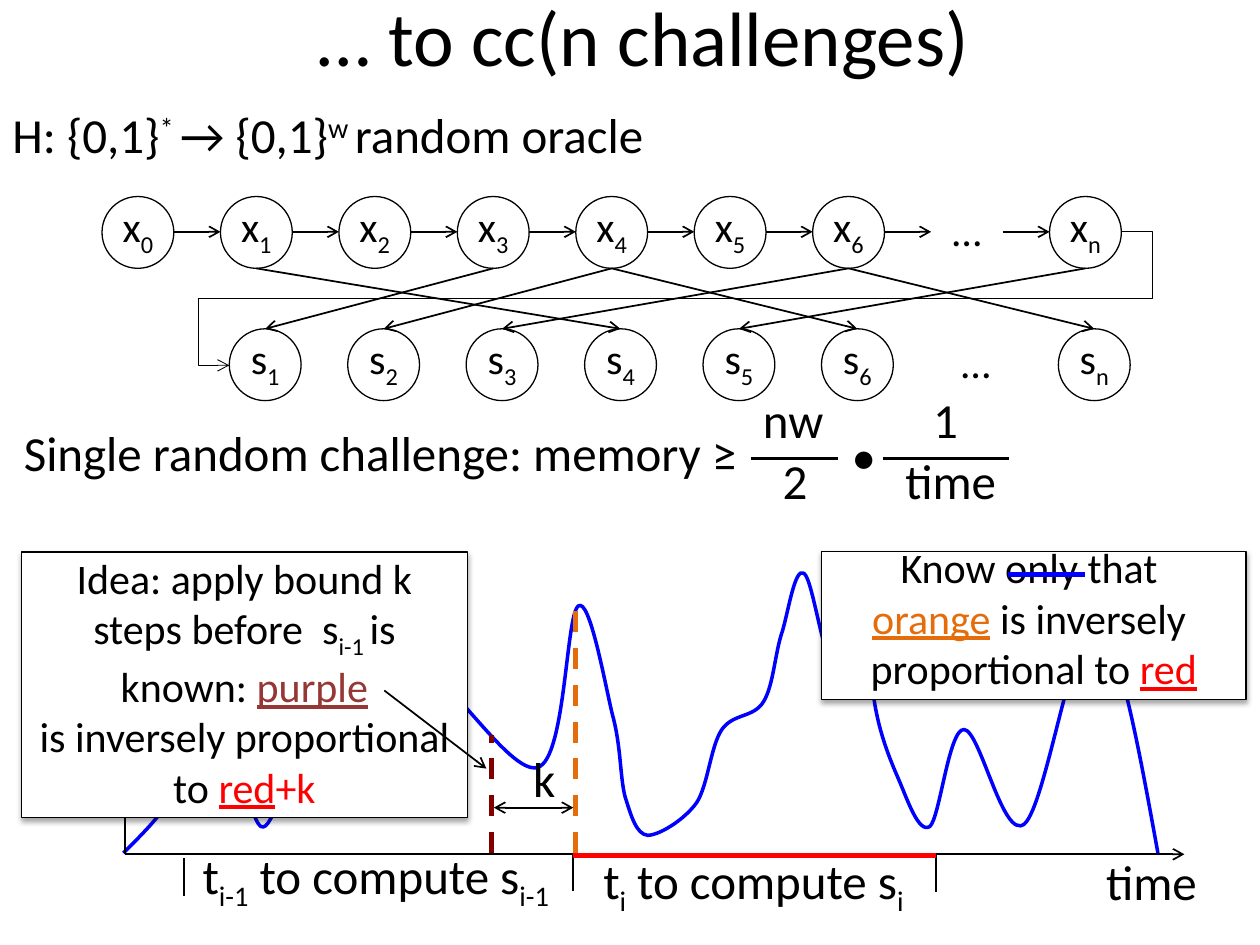
from lxml import etree
from pptx import Presentation
from pptx import util as u
from pptx.dml.color import RGBColor
from pptx.enum import dml, shapes, text
from pptx.oxml import parse_xml
from pptx.oxml.ns import nsdecls, qn

Inches, Pt = u.Inches, u.Pt
BLACK = RGBColor(0x00, 0x00, 0x00)
WHITE = RGBColor(0xFF, 0xFF, 0xFF)
BLUE = RGBColor(0x00, 0x00, 0xFF)
RED = RGBColor(0xFF, 0x00, 0x00)
ORANGE = RGBColor(0xE4, 0x6C, 0x0A)
PURPLE = RGBColor(0x95, 0x37, 0x35)
MAROON = RGBColor(0x80, 0x00, 0x00)

NODE, PITCH = 0.57, 0.94
X_LEFT, X_TOP = 0.81, 1.56
S_LEFT, S_TOP = 1.82, 2.61
X_MID = 1.84
AXIS_X, AXIS_Y = 0.99, 6.78

CURVE_START = (0.98, 6.77)
# Each group holds two control points and the end point of one Bézier piece.
CURVE = [
    (1.1, 6.65, 1.22, 6.53, 1.29, 6.43), (1.36, 6.32, 1.35, 6.21, 1.42, 6.15),
    (1.49, 6.09, 1.63, 6.14, 1.69, 6.05), (1.75, 5.96, 1.72, 5.52, 1.78, 5.6),
    (1.84, 5.69, 1.97, 6.49, 2.07, 6.56), (2.17, 6.62, 2.28, 6.03, 2.39, 5.98),
    (2.51, 5.94, 2.62, 6.39, 2.76, 6.27), (2.9, 6.15, 2.99, 5.28, 3.24, 5.25),
    (3.49, 5.22, 4.04, 6.17, 4.27, 6.09), (4.49, 6.02, 4.49, 4.88, 4.59, 4.81),
    (4.68, 4.74, 4.8, 5.42, 4.86, 5.67), (4.93, 5.92, 4.92, 6.16, 4.96, 6.32),
    (5.01, 6.48, 5.05, 6.62, 5.14, 6.63), (5.23, 6.63, 5.43, 6.51, 5.53, 6.37),
    (5.62, 6.23, 5.64, 5.92, 5.73, 5.79), (5.82, 5.66, 5.98, 5.7, 6.06, 5.57),
    (6.14, 5.44, 6.15, 5.18, 6.21, 5.01), (6.26, 4.84, 6.31, 4.5, 6.38, 4.55),
    (6.45, 4.59, 6.53, 5.23, 6.61, 5.25), (6.7, 5.28, 6.83, 4.67, 6.89, 4.72),
    (6.94, 4.77, 6.9, 5.33, 6.94, 5.57), (6.98, 5.82, 7.06, 6.02, 7.13, 6.18),
    (7.2, 6.34, 7.29, 6.62, 7.38, 6.56), (7.46, 6.49, 7.53, 5.79, 7.65, 5.79),
    (7.78, 5.79, 7.96, 6.68, 8.13, 6.54), (8.3, 6.4, 8.52, 4.93, 8.69, 4.96),
    (8.87, 5, 9.03, 5.89, 9.19, 6.77),
]


def add_run(p, content, size=28, color=BLACK, underline=None, base=0):
    """Add text to p; a newline becomes a line break, base is a percentage."""
    for i, part in enumerate(content.split("\n")):
        if i:
            p.add_line_break()
        if not part:
            continue
        r = p.add_run()
        r.text = part
        r.font.name, r.font.size = "Calibri", Pt(size)
        r.font.color.rgb, r.font.underline = color, underline
        if base:
            r.font._element.set("baseline", str(base * 1000))


def sub(content):
    return content, {"base": -25}


def sup(content):
    return content, {"base": 30}


class Board:
    """Draws on one slide in a common style, with lengths in inches."""

    def __init__(self, s):
        self.s = s

    def set_text(self, sp, runs, size=28, align="LEFT", anchor="TOP", wrap=True, spacing=None):
        tf = sp.text_frame
        tf.word_wrap = wrap
        tf.vertical_anchor = text.MSO_ANCHOR[anchor]
        p = tf.paragraphs[0]
        p.alignment = text.PP_ALIGN[align]
        p.line_spacing = spacing
        for run in runs:
            content, style = (run, {}) if isinstance(run, str) else run
            add_run(p, content, **{"size": size, **style})

    def label(self, box, *runs, **style):
        sp = self.s.shapes.add_textbox(*map(Inches, box))
        self.set_text(sp, runs, **style)
        if not style.get("wrap", True):
            sp.text_frame.auto_size = text.MSO_AUTO_SIZE.SHAPE_TO_FIT_TEXT

    def outline(self, line, color, width):
        line.color.rgb, line.width = color, Pt(width)

    def shape(self, kind, box, fill=None, line=BLACK):
        sp = self.s.shapes.add_shape(kind, *map(Inches, box))
        sp.shadow.inherit = False
        if fill is None:
            sp.fill.background()
        else:
            sp.fill.solid()
            sp.fill.fore_color.rgb = fill
        if line is None:
            sp.line.fill.background()
        else:
            self.outline(sp.line, line, 0.75)
        return sp

    def node(self, left, top, name, index):
        dots = index == "…"
        sp = self.shape(shapes.MSO_SHAPE.OVAL, (left, top, NODE, NODE), line=None if dots else BLACK)
        tf = sp.text_frame
        tf.margin_top, tf.margin_bottom = 0, Inches(0.05)
        runs = [index] if dots else [name, sub(index)]
        self.set_text(sp, runs, size=24, align="CENTER", anchor="MIDDLE", wrap=False)

    def callout(self, box, *runs):
        sp = self.shape(shapes.MSO_SHAPE.RECTANGLE, box, fill=WHITE)
        sp._element.spPr.find(qn("a:effectLst")).append(parse_xml(
            f'<a:outerShdw {nsdecls("a")} blurRad="{Pt(3.1)}" dist="{Pt(1.8)}" dir="5400000" '
            'rotWithShape="0"><a:srgbClr val="000000"><a:alpha val="35000"/></a:srgbClr></a:outerShdw>'))
        self.set_text(sp, runs, size=24, align="CENTER", anchor="BOTTOM")

    def line(self, x1, y1, x2, y2, color=BLACK, width=1, dash=False, head=False, tail=False,
             kind=shapes.MSO_CONNECTOR.STRAIGHT):
        c = self.s.shapes.add_connector(kind, *map(Inches, (x1, y1, x2, y2)))
        self.outline(c.line, color, width)
        if dash:
            c.line.dash_style = dml.MSO_LINE.DASH
        ln = c._element.spPr.find(qn("a:ln"))
        for tag, wanted in (("a:headEnd", head), ("a:tailEnd", tail)):
            if wanted:
                etree.SubElement(ln, qn(tag), type="arrow")
        etree.SubElement(c._element.spPr, qn("a:effectLst"))
        return c

    def detour(self, x1, y1, x2, y2, adjustments):
        """Elbow arrow with five legs."""
        c = self.line(x1, y1, x2, y2, width=0.5, tail=True, kind=shapes.MSO_CONNECTOR.ELBOW)
        geom = c._element.spPr.find(qn("a:prstGeom"))
        geom.set("prst", "bentConnector5")
        guides = geom.find(qn("a:avLst"))
        for i, value in enumerate(adjustments, 1):
            etree.SubElement(guides, qn("a:gd"), name=f"adj{i}", fmla=f"val {value}")

    def curve(self, start, pieces, color, width):
        fb = self.s.shapes.build_freeform(*map(Inches, start))
        points = [(Inches(b[i]), Inches(b[i + 1])) for b in pieces for i in (0, 2, 4)]
        fb.add_line_segments(points, close=False)
        sp = fb.convert_to_shape()
        sp.shadow.inherit = False
        sp.fill.background()
        self.outline(sp.line, color, width)
        legs = list(sp._element.iter(qn("a:lnTo")))
        for i in range(0, len(legs), 3):
            bezier = etree.Element(qn("a:cubicBezTo"))
            legs[i].addprevious(bezier)
            for leg in legs[i:i + 3]:
                bezier.append(leg[0])
                leg.getparent().remove(leg)


def draw_graph(b):
    for i, index in enumerate("0123456…n"):
        left = X_LEFT + i * PITCH
        b.node(left, X_TOP, "x", index)
        if index != "n":
            b.line(left + NODE, X_MID, left + PITCH, X_MID, tail=True)
    for i, index in enumerate("123456…n"):
        b.node(S_LEFT + i * PITCH, S_TOP, "s", index)
    # Column of the x node, column of the s node.
    for x, s in ((3, 0), (4, 1), (6, 2), (1, 3), (8, 4), (4, 5), (6, 7)):
        b.line(X_LEFT + x * PITCH + NODE / 2, X_TOP + NODE,
               S_LEFT + s * PITCH + NODE / 2, S_TOP, tail=True)
    b.detour(8.9, X_MID, S_LEFT, 2.9, (-3500, 50000, 103500))


def draw_bound(b):
    b.label((0.09, 3.3, 6.68, 0.72), "Single random challenge: memory ≥")
    for content, box in (("nw", (5.95, 3.04, 0.69, 0.57)), ("2", (6.11, 3.53, 0.4, 0.57)),
                         ("1", (7.3, 3.04, 0.41, 0.57)), ("time", (7.08, 3.53, 0.93, 0.57)),
                         ("• ", (6.66, 3.33, 0.38, 0.57))):
        b.label(box, content, align="CENTER", wrap=False)
    for x1, x2 in ((5.96, 6.65), (7.01, 8.01)):
        b.line(x1, 3.64, x2, 3.64, width=1.5)


def draw_timeline(b):
    b.line(AXIS_X, AXIS_Y, 9.4, AXIS_Y, tail=True)
    b.line(AXIS_X, AXIS_Y, AXIS_X, 4.38, tail=True)
    b.label((8.68, 6.71, 0.93, 0.57), "time", wrap=False)
    for box, index in (((4.69, 6.75, 2.7, 0.59), "i"), ((1.51, 6.71, 3.23, 0.59), "i-1")):
        b.label(box, "t", sub(index), " to compute s", sub(index), spacing=0.8)
    for x, top in ((1.46, 6.81), (4.55, 6.77), (7.43, 6.78)):
        b.line(x, top + 0.3, x, top)
    b.line(4.57, 6.77, 4.57, 4.79, color=ORANGE, width=3, dash=True)
    b.line(4.55, 6.79, 7.43, 6.79, color=RED, width=3)


def draw_callouts(b):
    red = ("red", {"color": RED, "underline": True})
    b.callout((6.52, 4.38, 3.37, 1.17), "Know only that \n",
              ("orange", {"color": ORANGE, "underline": True}),
              " is inversely \nproportional to ", red)
    b.callout((0.17, 4.38, 3.54, 2.11), "Idea: apply bound k steps before  s", sub("i-1 "),
              "is known: ", ("purple\n", {"color": PURPLE, "underline": True}),
              "is inversely proportional to ", red, ("+k", {"color": RED}))
    b.line(3.9, 6.77, 3.9, 5.83, color=MAROON, width=3, dash=True)
    b.line(3.05, 5.48, 3.86, 6.1, tail=True)
    b.label((4.13, 5.89, 0.38, 0.57), "k", align="CENTER", wrap=False)
    b.line(3.92, 6.41, 4.55, 6.41, head=True, tail=True)
    b.line(8, 4.56, 8.61, 4.56, color=BLUE, width=3)


def main():
    prs = Presentation()
    prs.slide_width, prs.slide_height = Inches(10), Inches(7.5)
    b = Board(prs.slides.add_slide(prs.slide_layouts[6]))
    b.curve(CURVE_START, CURVE, BLUE, 2)
    b.label((0.36, -0.34, 9.5, 1.25), "… to cc(n challenges)", size=44, align="CENTER", anchor="MIDDLE")
    b.label((0, 0.78, 6.68, 0.72), "H: {0,1}", sup("* "), "→ {0,1}", sup("w "), "random oracle")
    draw_graph(b)
    draw_bound(b)
    draw_timeline(b)
    draw_callouts(b)
    prs.save("out.pptx")


if __name__ == "__main__":
    main()
